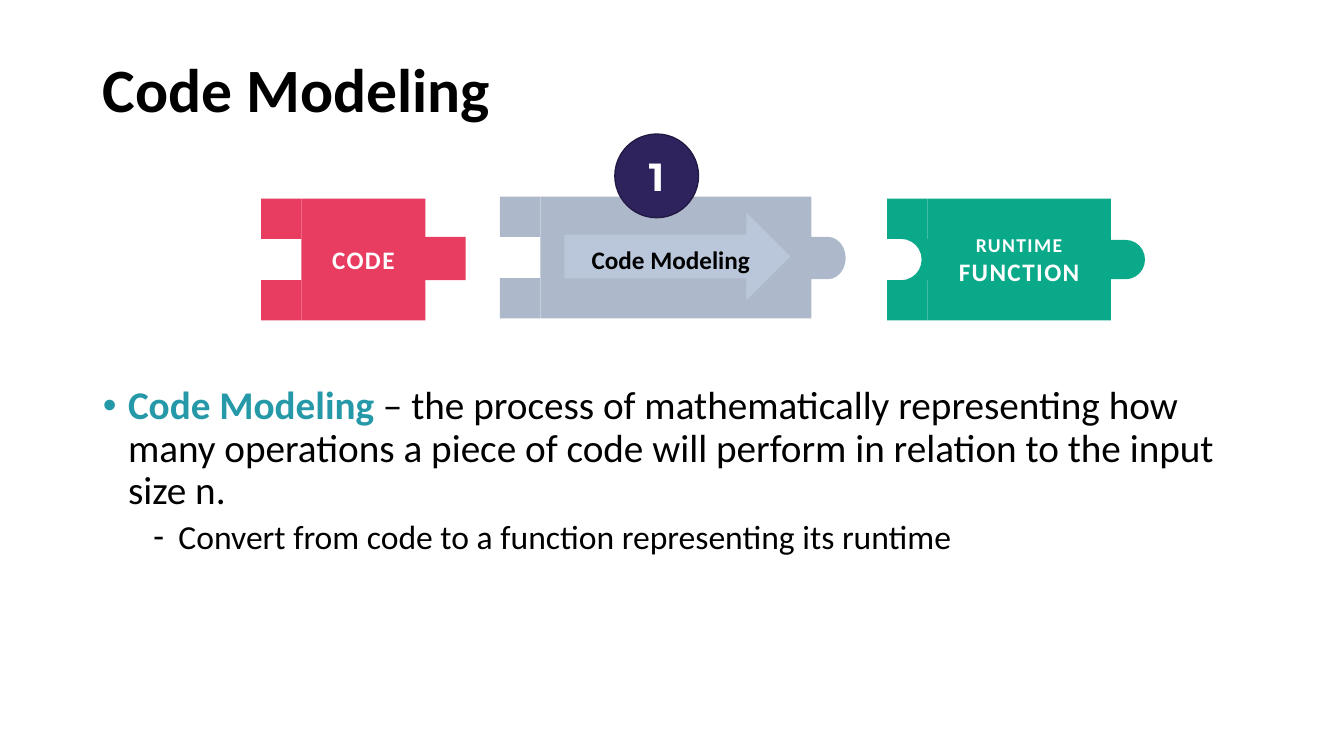
from lxml.etree import SubElement
from pptx import Presentation
from pptx.dml.color import RGBColor
from pptx.enum.shapes import MSO_SHAPE as Preset
from pptx.enum.text import MSO_ANCHOR as Anchor, MSO_AUTO_SIZE as AutoSize, PP_ALIGN as Align
from pptx.oxml.ns import qn
from pptx.util import Inches, Pt

# Grid: one cell is a tenth of an inch
CELL = Inches(0.1)
COLUMNS, ROWS = 133.33, 75
MARGIN, CONTENT_WIDTH = 9.2, 115
PRONG, PIECE_HEIGHT = 4, 12.1

BLACK = RGBColor(0x00, 0x00, 0x00)
WHITE = RGBColor(0xFF, 0xFF, 0xFF)
TEAL = RGBColor(0x26, 0x99, 0xA9)
RED = RGBColor(0xE8, 0x3C, 0x60)
GREY = RGBColor(0xAD, 0xB9, 0xCA)
PALE_GREY = RGBColor(0xBA, 0xC7, 0xDA)
GREEN = RGBColor(0x09, 0xA9, 0x8A)
PURPLE = RGBColor(0x2E, 0x23, 0x5D)
DARK_PURPLE = RGBColor(0x22, 0x1A, 0x45)


def cells(*counts):
    return [round(count * CELL) for count in counts]


def place(holder, left, top, width, height):
    holder.left, holder.top, holder.width, holder.height = cells(left, top, width, height)


def style(run, size, color, bold=True, font="Calibri", spacing=0):
    run.font.name, run.font.size, run.font.bold = font, Pt(size), bold
    run.font.color.rgb = color
    if spacing:
        run.font._element.set("spc", str(spacing * 100))


def add_block(slide, preset, area, fill, outline=None):
    block = slide.shapes.add_shape(preset, *cells(*area))
    block.shadow.inherit = False
    block.fill.solid()
    block.fill.fore_color.rgb = fill
    if outline is None:
        block.line.fill.background()
    else:
        block.line.color.rgb = outline
        block.line.width = Pt(1)
    return block


def add_round_knob(slide, area, fill):
    """Bar with a rounded right end and a hollow left end."""
    knob = add_block(slide, Preset.FLOWCHART_STORED_DATA, area, fill)
    knob._element.spPr.find(qn("a:xfrm")).set("flipH", "1")


def add_puzzle_piece(slide, left, top, width, fill):
    """Two prongs on the left, then the body, which is returned."""
    for prong_top in (top, top + PIECE_HEIGHT - PRONG):
        add_block(slide, Preset.RECTANGLE, (left, prong_top, PRONG, PRONG), fill)
    body_area = (left + PRONG, top, width, PIECE_HEIGHT)
    return add_block(slide, Preset.RECTANGLE, body_area, fill)


def label(block, lines, sizes, font="Calibri", spacing=0):
    frame = block.text_frame
    frame.text = "\n".join(lines)
    frame.vertical_anchor = Anchor.MIDDLE
    for paragraph, size in zip(frame.paragraphs, sizes):
        paragraph.alignment = Align.CENTER
        style(paragraph.runs[0], size, WHITE, font=font, spacing=spacing)


def set_bullet(paragraph, mark, indent):
    properties = paragraph._p.get_or_add_pPr()
    properties.set("marL", str(Inches(indent)))
    properties.set("indent", str(Inches(-0.25)))
    SubElement(properties, qn("a:buFont")).set("typeface", "Arial")
    SubElement(properties, qn("a:buChar")).set("char", mark)
    paragraph.line_spacing = 0.9


def fill_title(slide):
    title = slide.shapes.title
    place(title, MARGIN, 5, CONTENT_WIDTH, 8.3)
    frame = title.text_frame
    frame.text = "Code Modeling"
    frame.vertical_anchor, frame.auto_size = Anchor.MIDDLE, AutoSize.NONE
    heading = frame.paragraphs[0]
    heading.alignment, heading.line_spacing = Align.LEFT, 0.9
    style(heading.runs[0], 44, BLACK)


def fill_definition(slide):
    body = slide.placeholders[1]
    place(body, MARGIN, 37.8, CONTENT_WIDTH, 29.8)
    frame = body.text_frame
    frame.auto_size = AutoSize.NONE

    definition = frame.paragraphs[0]
    set_bullet(definition, "•", 0.25)
    definition.space_before = Pt(0)
    term, meaning = definition.add_run(), definition.add_run()
    term.text = "Code Modeling "
    meaning.text = ("– the process of mathematically representing how many operations "
                    "a piece of code will perform in relation to the input size n.")
    style(term, 28, TEAL)
    style(meaning, 28, BLACK, bold=False)

    detail = frame.add_paragraph()
    detail.text = "Convert from code to a function representing its runtime"
    detail.level = 1
    set_bullet(detail, "-", 0.75)
    detail.space_before = Pt(5)
    style(detail.runs[0], 24, BLACK, bold=False)


def add_code_piece(slide):
    code = add_puzzle_piece(slide, 25.9, 19.7, 12.3, RED)
    label(code, ["CODE"], [18], spacing=1)
    add_block(slide, Preset.RECTANGLE, (41.6, 23.5, 4.6, 4.3), RED)


def add_modeling_piece(slide):
    add_puzzle_piece(slide, 49.6, 19.5, 26.9, GREY)
    add_round_knob(slide, (73.3, 23.5, 10.6, 4.2), GREY)
    add_block(slide, Preset.RIGHT_ARROW, (56, 21.1, 22.4, 8.7), PALE_GREY)
    caption = slide.shapes.add_textbox(*cells(57.7, 23.7, 17.8, 4)).text_frame
    caption.text = "Code Modeling"
    caption.word_wrap = False
    style(caption.paragraphs[0].runs[0], 18, BLACK)


def add_function_piece(slide):
    add_round_knob(slide, (102, 23.8, 11.6, 3.9), GREEN)
    add_round_knob(slide, (89.4, 23.7, 12.2, 4.1), GREEN)
    runtime = add_puzzle_piece(slide, 88, 19.7, 18.2, GREEN)
    label(runtime, ["RUNTIME", "FUNCTION"], [14, 18], spacing=1)


def add_step_number(slide):
    step = add_block(slide, Preset.OVAL, (61, 13.3, 8.3, 8.3), PURPLE, DARK_PURPLE)
    label(step, ["1"], [28], font="Montserrat")


def main():
    deck = Presentation()
    deck.slide_width, deck.slide_height = cells(COLUMNS, ROWS)
    slide = deck.slides.add_slide(deck.slide_layouts[1])

    # Title and definition
    fill_title(slide)
    fill_definition(slide)

    # Puzzle pieces from code to runtime function
    add_code_piece(slide)
    add_modeling_piece(slide)
    add_function_piece(slide)
    add_step_number(slide)

    deck.save("out.pptx")


if __name__ == "__main__":
    main()
